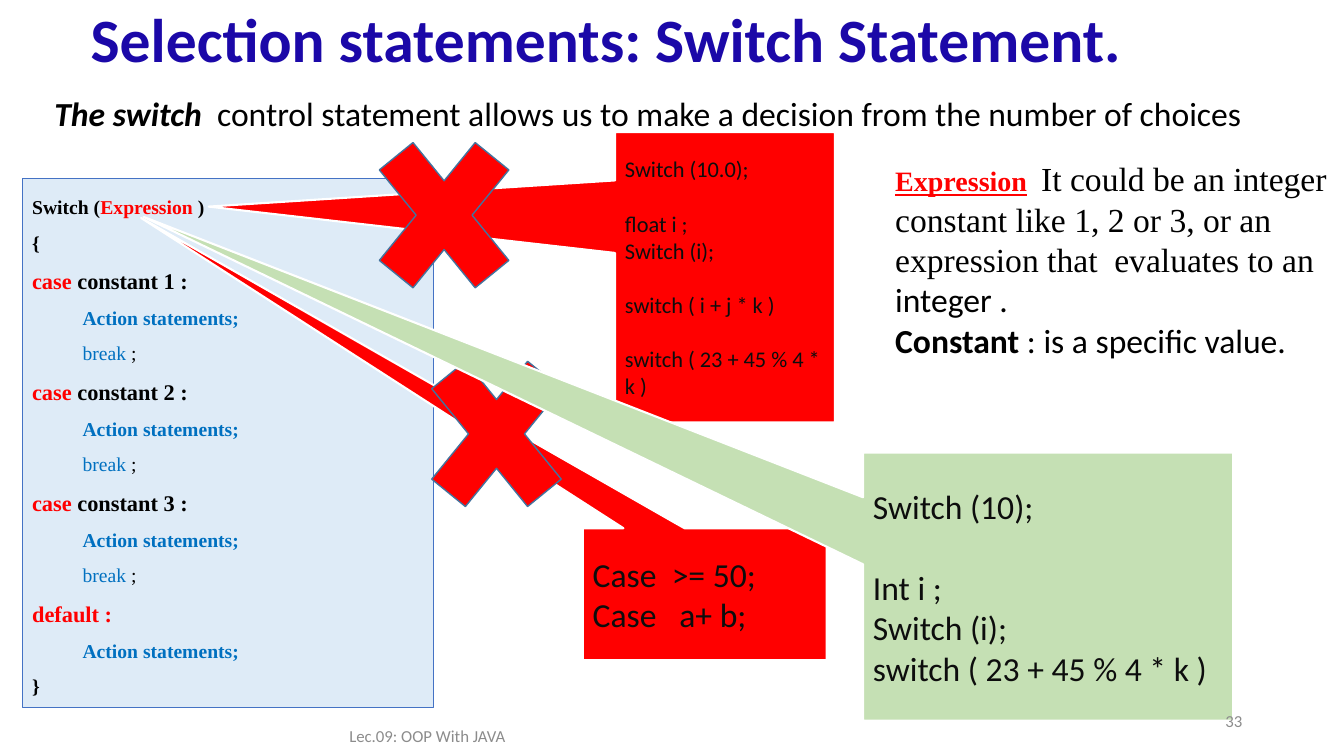
from pptx import Presentation
from pptx import util as u
from pptx.dml.color import RGBColor
from pptx.enum import shapes, text

NAVY = RGBColor(0x1B, 0x08, 0xA8)
BLACK = RGBColor(0, 0, 0)
INK = RGBColor(0x0D, 0x0D, 0x0D)
RED = RGBColor(0xFF, 0, 0)
BLUE = RGBColor(0, 0x70, 0xC0)
PALE = RGBColor(0xDE, 0xEB, 0xF7)
GREEN = RGBColor(0xC5, 0xE0, 0xB4)
WHITE = RGBColor(0xFF, 0xFF, 0xFF)
EDGE = RGBColor(0x44, 0x72, 0xC4)
STEEL = RGBColor(0x43, 0x73, 0x9E)
GRAY = RGBColor(0x8C, 0x8C, 0x8C)
SANS, SERIF = "Calibri", "Times New Roman"
LEFT, MID, RIGHT = text.PP_ALIGN.LEFT, text.PP_ALIGN.CENTER, text.PP_ALIGN.RIGHT
KIND = shapes.MSO_SHAPE

deck = Presentation()
deck.slide_width, deck.slide_height = u.Inches(13.33), u.Inches(7.5)
slide = deck.slides.add_slide(deck.slide_layouts[6])


def draw(kind, box, fill, line, width):
    shape = slide.shapes.add_shape(kind, *map(u.Inches, box))
    shape.shadow.inherit = False
    shape.fill.solid()
    shape.fill.fore_color.rgb = fill
    shape.line.color.rgb = line
    shape.line.width = u.Pt(width)
    return shape


def write(shape, rows, align=LEFT, space=1.0, middle=True, gaps=()):
    frame = shape.text_frame
    frame.word_wrap = True
    anchor = text.MSO_ANCHOR
    frame.vertical_anchor = anchor.MIDDLE if middle else anchor.TOP
    for n, row in enumerate(rows):
        para = frame.paragraphs[0] if n == 0 else frame.add_paragraph()
        para.alignment = align
        para.line_spacing = space
        if n in gaps:
            para.space_before = u.Pt(row[0][1] * 1.22)
        for words, size, color, face, style in row:
            run = para.add_run()
            run.text = words
            font = run.font
            font.size, font.name = u.Pt(size), face
            font.color.rgb = color
            font.bold = "b" in style
            font.italic = "i" in style
            font.underline = "u" in style


code = [
    [("Switch (", 14, BLACK, SERIF, "b"), ("Expression", 14, RED, SERIF, "b"),
     (" )", 14, BLACK, SERIF, "b")],
    [("{", 14, BLACK, SERIF, "b")],
]
action = [("\tAction statements;", 14, BLUE, SERIF, "b")]
for num in (1, 2, 3):
    code += [
        [("case", 16, RED, SERIF, "b"), (f" constant {num} :", 16, BLACK, SERIF, "b")],
        action,
        [("\tbreak", 14, BLUE, SERIF, ""), (" ;", 14, BLACK, SERIF, "")],
    ]
code += [[("default :", 16, RED, SERIF, "b")], action, [("}", 14, BLACK, SERIF, "b")]]

title = [[("Selection statements: Switch Statement.", 44, NAVY, SANS, "b")]]
intro = [[
    ("The switch  ", 24, BLACK, SANS, "bi"),
    ("control statement allows us to make a decision from the number of choices",
     24, BLACK, SANS, ""),
]]
terms = [
    [("Expression", 20, RED, SERIF, "bu"), ("  ", 20, RED, SERIF, ""),
     ("It could be an integer constant like 1, 2 or 3, or an expression that  "
      "evaluates to an ", 24, BLACK, SERIF, ""),
     ("integer .", 24, BLACK, SANS, "")],
    [("Constant", 24, BLACK, SANS, "b"), (" : is a specific value.", 24, BLACK, SANS, "")],
]
foot = [[("Lec.09: OOP With JAVA", 12, GRAY, SANS, "")]]
page = [[("33", 12, GRAY, SANS, "")]]

panel = draw(KIND.RECTANGLE, (0.22, 1.77, 4.08, 5.25), PALE, EDGE, 0.5)
write(panel, code, space=1.5, middle=False)

calls = [
    ((6.1, 1.31, 2.18, 2.88), (-2.349, -0.243), RED, 16,
     ["Switch (10.0);", "float i ;", "Switch (i);", "switch ( i + j * k )",
      "switch ( 23 + 45 % 4 * k )"], (1, 3, 4), (3.49, 1.01)),
    ((5.78, 5.24, 2.42, 1.31), (-2.31, -2.85), RED, 24,
     ["Case  >= 50;", "Case   a+ b;"], (), (4.01, 3.18)),
    ((8.56, 4.49, 3.67, 2.66), (-2.444, -1.379), GREEN, 24,
     ["Switch (10);", "Int i ;", "Switch (i);", "switch ( 23 + 45 % 4 * k )"], (1,), None),
]
for box, tip, fill, size, lines, gaps, cross in calls:
    call = draw(KIND.RECTANGULAR_CALLOUT, box, fill, WHITE, 1.5)
    call.adjustments[0], call.adjustments[1] = tip
    write(call, [[(line, size, INK, SANS, "")] for line in lines], gaps=gaps)
    if cross:
        draw(KIND.MATH_MULTIPLY, (*cross, 1.83, 2.25), RED, STEEL, 1)

for box, rows, align, space, middle in [
    ((0.08, 0.09, 11.87, 0.66), title, MID, 0.9, True),
    ((0.44, 0.67, 12.49, 0.71), intro, LEFT, 1.5, False),
    ((8.78, 1.52, 5.25, 2.52), terms, LEFT, 1.0, False),
    ((1.99, 7.1, 4.5, 0.4), foot, MID, 1.0, True),
    ((9.42, 6.95, 3, 0.4), page, RIGHT, 1.0, True),
]:
    write(slide.shapes.add_textbox(*map(u.Inches, box)), rows, align, space, middle)

deck.save("out.pptx")
